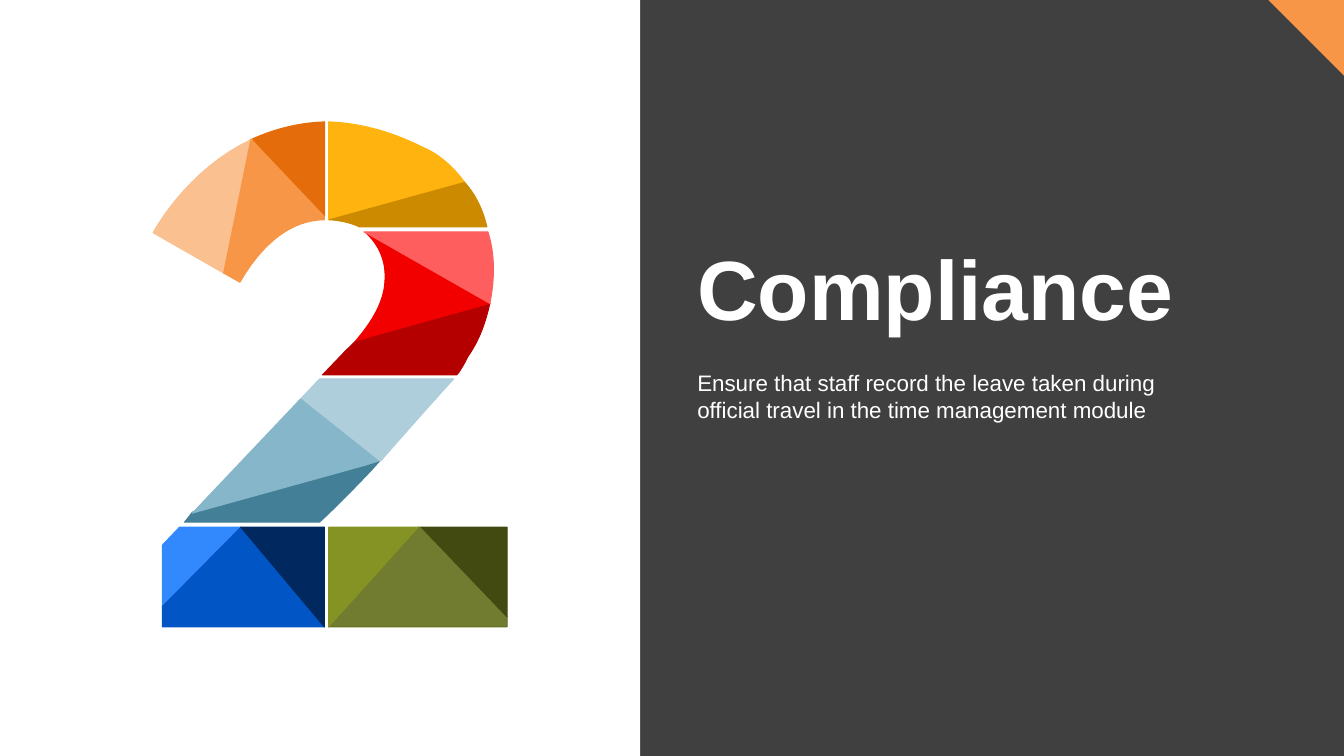
"""Builds the section slide "Compliance" with a faceted numeral 2."""
from lxml import etree
from pptx import Presentation
from pptx import util as u
from pptx.dml.color import RGBColor
from pptx.enum import shapes, text
from pptx.oxml.ns import qn

COLOURS = {
    "backdrop": "404040", "white": "FFFFFF", "corner": "F79646",
    "olive": "636E1B", "lime": "849324", "moss": "424A12",
    "rust": "E46C0A", "peach": "FAC090", "orange": "F79646",
    "teal": "437F97", "maroon": "B50000", "amber": "FFB30F", "ochre": "CB8A00",
    "sky": "3288FD", "blue": "0255C5", "navy": "01295F",
    "red": "F20000", "coral": "FF5E5E", "steel": "86B6C9", "mist": "AECEDB",
}

# Two numbers are a corner; six are a cubic curve (two handles, then its end).
FACETS = {
    "olive": [(298.8, 376.6), (234.7, 447.8), (362.2, 447.8), (362.2, 440.6), (301, 376.6)],
    "lime": [(234.7, 376.6), (234.7, 447.8), (298.8, 376.6)],
    "moss": [(301, 376.6), (362.2, 440.6), (362.2, 376.6)],
    "rust": [(231.8, 87.1), (211.7, 87.8, 194.4, 92.9, 180, 99.4), (231.8, 154.8)],
    "peach": [(109.4, 166.3), (159.8, 195.1), (180, 99.4),
              (132.5, 121.7, 109.4, 166.3, 109.4, 166.3)],
    "orange": [(159.8, 195.1), (171.4, 201.6), (192.2, 165.6, 215.3, 157, 231.8, 157),
               (231.8, 154.8), (179.3, 99.4)],
    "teal": [(259.9, 331.9), (137.5, 365.8), (131.8, 373), (228.2, 373),
             (239.8, 362.2, 251.3, 350.6, 264.2, 337),
             (266.4, 334.8, 269.3, 331.2, 272.2, 328.3)],
    "maroon": [(303.1, 229.7), (254.2, 243.4), (246.2, 251.3), (230.4, 267.8), (326.2, 267.8),
               (328.3, 265.7, 329.8, 262.8, 331.9, 259.2),
               (332.6, 257.8, 333.4, 256.3, 334.1, 254.9),
               (342.7, 242.6, 347, 229.7, 349.9, 216.7)],
    "amber": [(301.7, 105.1), (277.2, 92.9, 254.9, 87.8, 234.7, 87.1), (234.7, 157),
              (235.4, 157), (331.9, 130.3), (324, 119.5, 313.9, 110.2, 301.7, 105.1)],
    "ochre": [(347.8, 162), (344.9, 149.8, 339.8, 139, 331.9, 130.3), (235.4, 157),
              (247, 157.7, 255.6, 161.3, 256.3, 162)],
    "sky": [(172.1, 376.6), (128.2, 376.6), (115.9, 389.5), (115.9, 433.4)],
    "blue": [(115.9, 433.4), (115.9, 447.8), (231.8, 447.8), (172.1, 376.6)],
    "navy": [(172.1, 376.6), (231.8, 447.8), (231.8, 376.6)],
    "red": [(261.4, 166.3), (272.9, 177.1, 275.8, 189.4, 275, 200.9),
            (274.3, 218.2, 262.1, 234, 254.2, 243.4), (303.1, 229.7), (349.9, 216.7)],
    "coral": [(348.5, 165.6), (259.9, 165.6), (261.4, 166.3), (349.9, 216.7),
              (353.5, 198.7, 353.5, 181.4, 348.5, 165.6)],
    "steel": [(215.3, 284.4), (137.5, 366.5), (259.9, 332.6), (271.4, 329)],
    "mist": [(324, 270.7), (228.2, 270.7), (215.3, 284.4), (271.4, 329), (272.2, 329),
             (286.6, 312.5, 303.1, 289.4, 324, 270.7)],
}
FACETS["mist"][-1] = (286.6, 312.5, 303.1, 293.8, 324, 270.7)
CURVE_STEPS = 16

deck = Presentation()
deck.slide_width, deck.slide_height = u.Pt(960), u.Pt(540)
slide = deck.slides.add_slide(deck.slide_layouts[6])
slide.background.fill.solid()
slide.background.fill.fore_color.rgb = RGBColor.from_string(COLOURS["backdrop"])


def paint(shape, colour, outlined=False):
    shape.shadow.inherit = False
    shape.fill.solid()
    shape.fill.fore_color.rgb = RGBColor.from_string(COLOURS[colour])
    if outlined:
        shape.line.color.rgb = RGBColor.from_string(COLOURS[colour])
        shape.line.width = u.Pt(0.75)
    else:
        shape.line.fill.background()


def draw_outline(segments):
    points = [segments[0]]
    for segment in segments[1:]:
        if len(segment) == 2:
            points.append(segment)
            continue
        x0, y0 = points[-1]
        x1, y1, x2, y2, x3, y3 = segment
        for step in range(1, CURVE_STEPS + 1):
            t = step / CURVE_STEPS
            a, b, c, d = (1 - t) ** 3, 3 * t * (1 - t) ** 2, 3 * t * t * (1 - t), t ** 3
            points.append((a * x0 + b * x1 + c * x2 + d * x3,
                           a * y0 + b * y1 + c * y2 + d * y3))
    start, *rest = [(u.Pt(x), u.Pt(y)) for x, y in points]
    builder = slide.shapes.build_freeform(*start)
    builder.add_line_segments(rest, close=True)
    return builder.convert_to_shape()


paint(draw_outline([(906, 0), (960, 0), (960, 54)]), "corner")
numeral_panel = slide.shapes.add_shape(
    shapes.MSO_SHAPE.RECTANGLE, u.Pt(0), u.Pt(0), u.Pt(457.2), u.Pt(540))
paint(numeral_panel, "white")

numeral = []
for colour, segments in FACETS.items():
    facet = draw_outline(segments)
    paint(facet, colour, outlined=True)
    numeral.append(facet)
olive_fill = numeral[0].fill._xPr.find(qn("a:solidFill"))
etree.SubElement(olive_fill[0], qn("a:alpha"), val="90000")
slide.shapes.add_group_shape(numeral)

CAPTIONS = [
    ("Ensure that staff record the leave taken during official travel in the time management module",
     (491, 259.9, 345.6, 46.1),
     {"word_wrap": True, "auto_size": text.MSO_AUTO_SIZE.SHAPE_TO_FIT_TEXT},
     {"size": u.Pt(16), "name": "Arial"}, 1.0),
    ("Compliance", (491, 87.1, 419.8, 157),
     {"word_wrap": True, "vertical_anchor": text.MSO_ANCHOR.BOTTOM},
     {"size": u.Pt(60), "name": "Arial", "bold": True}, 0.8),
]
for wording, place, frame_format, font_format, spacing in CAPTIONS:
    frame = slide.shapes.add_textbox(*map(u.Pt, place)).text_frame
    for attribute, value in frame_format.items():
        setattr(frame, attribute, value)
    paragraph = frame.paragraphs[0]
    paragraph.line_spacing = spacing
    run = paragraph.add_run()
    run.text = wording
    for attribute, value in font_format.items():
        setattr(run.font, attribute, value)
    run.font.color.rgb = RGBColor.from_string(COLOURS["white"])

deck.save("out.pptx")
